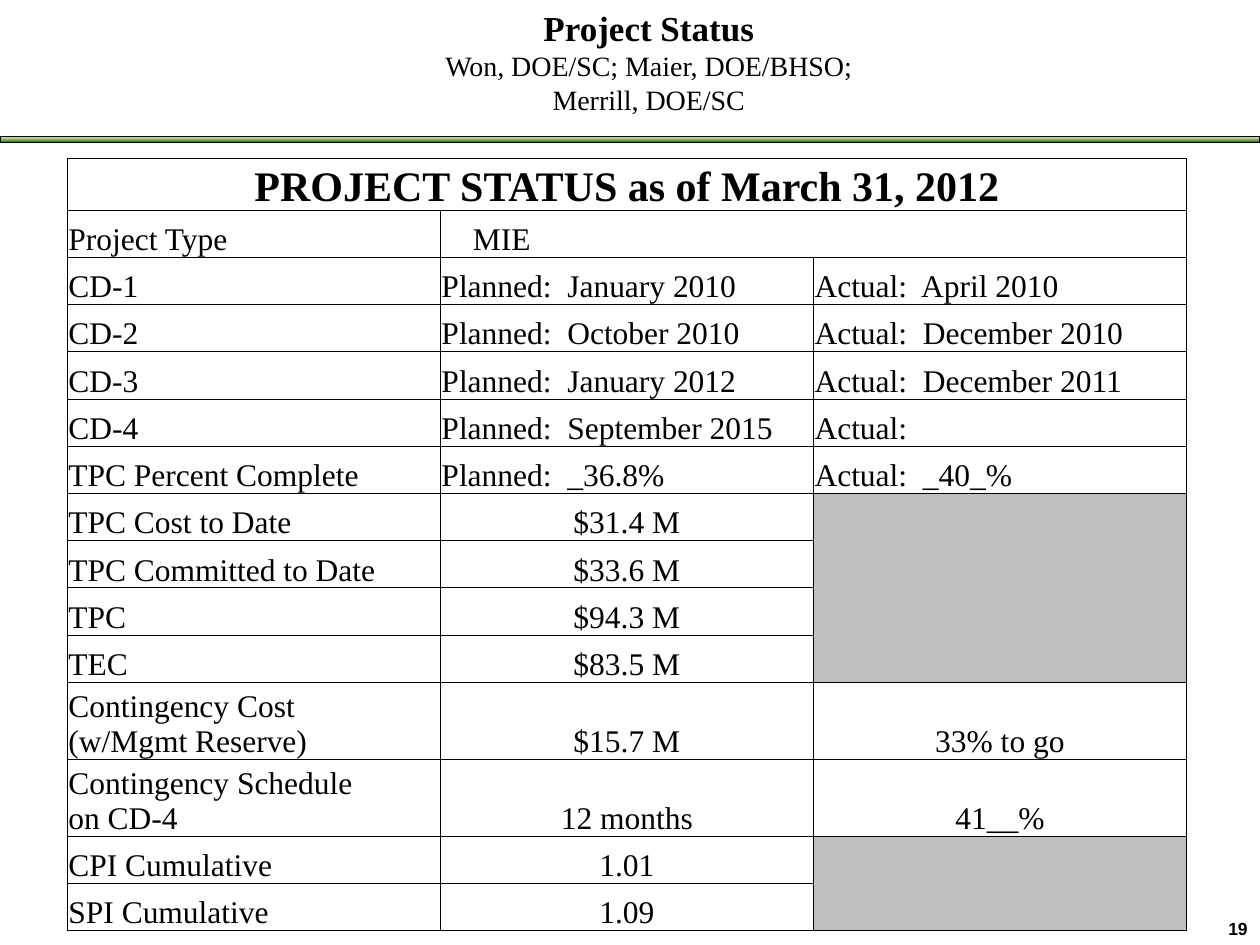
from pptx import Presentation
from pptx.dml.color import RGBColor
from pptx.enum.shapes import MSO_SHAPE
from pptx.enum.text import MSO_ANCHOR, PP_ALIGN
from pptx.oxml import parse_xml
from pptx.oxml.ns import nsdecls
from pptx.util import Pt

LEFT, CENTER, RIGHT = PP_ALIGN.LEFT, PP_ALIGN.CENTER, PP_ALIGN.RIGHT
TOP, MIDDLE, BOTTOM = MSO_ANCHOR.TOP, MSO_ANCHOR.MIDDLE, MSO_ANCHOR.BOTTOM
SERIF, SANS = "Times New Roman", "Arial"
BLACK, GRAY = "000000", "C0C0C0"

# Each line: text, font, size, colour, bold
TITLE_LINES = [
    ("Project Status", SERIF, 20, BLACK, True),
    ("Won, DOE/SC; Maier, DOE/BHSO;", SERIF, 16, BLACK, False),
    ("Merrill, DOE/SC", SERIF, 16, BLACK, False),
]
NUMBER_LINES = [("19", SANS, 10, BLACK, True)]
BAR_STOPS = [(0, "DDEBCF"), (50, "9CB86E"), (100, "156B13")]

STATUS_ROWS = [
    ("PROJECT STATUS as of March 31, 2012", "", ""),
    ("Project Type", "MIE", ""),
    ("CD-1", "Planned:  January 2010", "Actual:  April 2010"),
    ("CD-2", "Planned:  October 2010", "Actual:  December 2010"),
    ("CD-3", "Planned:  January 2012", "Actual:  December 2011"),
    ("CD-4", "Planned:  September 2015", "Actual:"),
    ("TPC Percent Complete", "Planned:  _36.8%", "Actual:  _40_%"),
    ("TPC Cost to Date", "$31.4 M", ""),
    ("TPC Committed to Date", "$33.6 M", ""),
    ("TPC", "$94.3 M", ""),
    ("TEC", "$83.5 M", ""),
    ("Contingency Cost\v(w/Mgmt Reserve)", "$15.7 M", "33% to go"),
    ("Contingency Schedule\non CD-4", "12 months", "41__%"),
    ("CPI Cumulative", "1.01", ""),
    ("SPI Cumulative", "1.09", ""),
]
# First row, first column, last row, last column
MERGES = [(0, 0, 0, 2), (1, 1, 1, 2), (7, 2, 10, 2), (13, 2, 14, 2)]
GRAY_CELLS = [(7, 2), (13, 2)]
FIRST_CENTERED_ROW = 7
HEADER_HEIGHT, ROW_HEIGHT, TALL_HEIGHT = 29.5, 27, 44
COLUMN_WIDTH = 213.2


def color(value):
    return RGBColor.from_string(value)


def style_font(font, name, size, value, bold):
    font.name, font.size, font.bold = name, Pt(size), bold
    font.color.rgb = color(value)


def place(shape, left, top, width, height):
    shape.left, shape.top = Pt(left), Pt(top)
    shape.width, shape.height = Pt(width), Pt(height)


def write_lines(shape, lines, align, anchor):
    """Fill one paragraph with separately styled lines."""
    frame = shape.text_frame
    frame.word_wrap = True
    frame.vertical_anchor = anchor
    paragraph = frame.paragraphs[0]
    paragraph.text = "\v".join(line[0] for line in lines)
    paragraph.alignment = align
    for run, line in zip(paragraph.runs, lines):
        style_font(run.font, *line[1:])


def add_bar(slide):
    bar = slide.shapes.add_shape(MSO_SHAPE.RECTANGLE, 0, Pt(77.8), Pt(720), Pt(3.6))
    bar.shadow.inherit = False
    bar.line.color.rgb = color(BLACK)
    bar.line.width = Pt(0.5)
    stops = "".join(
        f'<a:gs pos="{position * 1000}"><a:srgbClr val="{value}"/></a:gs>'
        for position, value in BAR_STOPS)
    gradient = parse_xml(
        f'<a:gradFill {nsdecls("a")}><a:gsLst>{stops}</a:gsLst>'
        '<a:lin ang="5400000" scaled="0"/></a:gradFill>')
    bar.element.spPr.insert(2, gradient)


def add_borders(cell):
    properties = cell._tc.get_or_add_tcPr()
    for side in ("lnL", "lnR", "lnT", "lnB"):
        properties.append(parse_xml(
            f'<a:{side} {nsdecls("a")} w="{Pt(0.5)}"><a:solidFill>'
            f'<a:srgbClr val="{BLACK}"/></a:solidFill></a:{side}>'))


def format_cell(cell, row, column, text):
    cell.text = text
    cell.vertical_anchor = BOTTOM
    cell.margin_left = cell.margin_right = cell.margin_top = Pt(0.7)
    cell.margin_bottom = 0
    add_borders(cell)
    if (row, column) in GRAY_CELLS:
        cell.fill.solid()
        cell.fill.fore_color.rgb = color(GRAY)
    else:
        cell.fill.background()
    centered = row == 0 or (row >= FIRST_CENTERED_ROW and column > 0)
    for paragraph in cell.text_frame.paragraphs:
        paragraph.alignment = CENTER if centered else LEFT
        for run in paragraph.runs:
            style_font(run.font, SERIF, 24 if row == 0 else 18, BLACK, row == 0)


def row_height(row):
    if row == 0:
        return HEADER_HEIGHT
    two_lines = len(STATUS_ROWS[row][0].splitlines()) > 1
    return TALL_HEIGHT if two_lines else ROW_HEIGHT


def add_status_table(slide):
    heights = [row_height(row) for row in range(len(STATUS_ROWS))]
    table = slide.shapes.add_table(
        len(STATUS_ROWS), 3, Pt(38.4), Pt(90.5),
        Pt(3 * COLUMN_WIDTH), Pt(sum(heights))).table
    table.first_row = table.horz_banding = False
    for column in table.columns:
        column.width = Pt(COLUMN_WIDTH)
    for row, texts in enumerate(STATUS_ROWS):
        table.rows[row].height = Pt(heights[row])
        for column, text in enumerate(texts):
            format_cell(table.cell(row, column), row, column, text)
    for top, left, bottom, right in MERGES:
        table.cell(top, left).merge(table.cell(bottom, right))
    table.cell(1, 1).margin_left = Pt(18.7)


def main():
    presentation = Presentation()
    presentation.slide_width, presentation.slide_height = Pt(720), Pt(540)
    slide = presentation.slides.add_slide(presentation.slide_layouts[5])
    add_bar(slide)
    number = slide.shapes.add_textbox(Pt(690.5), Pt(521.3), Pt(29.5), Pt(18.7))
    write_lines(number, NUMBER_LINES, RIGHT, TOP)
    title = slide.shapes.title
    place(title, 203, 0, 335.5, 69.8)
    write_lines(title, TITLE_LINES, CENTER, MIDDLE)
    add_status_table(slide)
    presentation.save("out.pptx")


if __name__ == "__main__":
    main()
